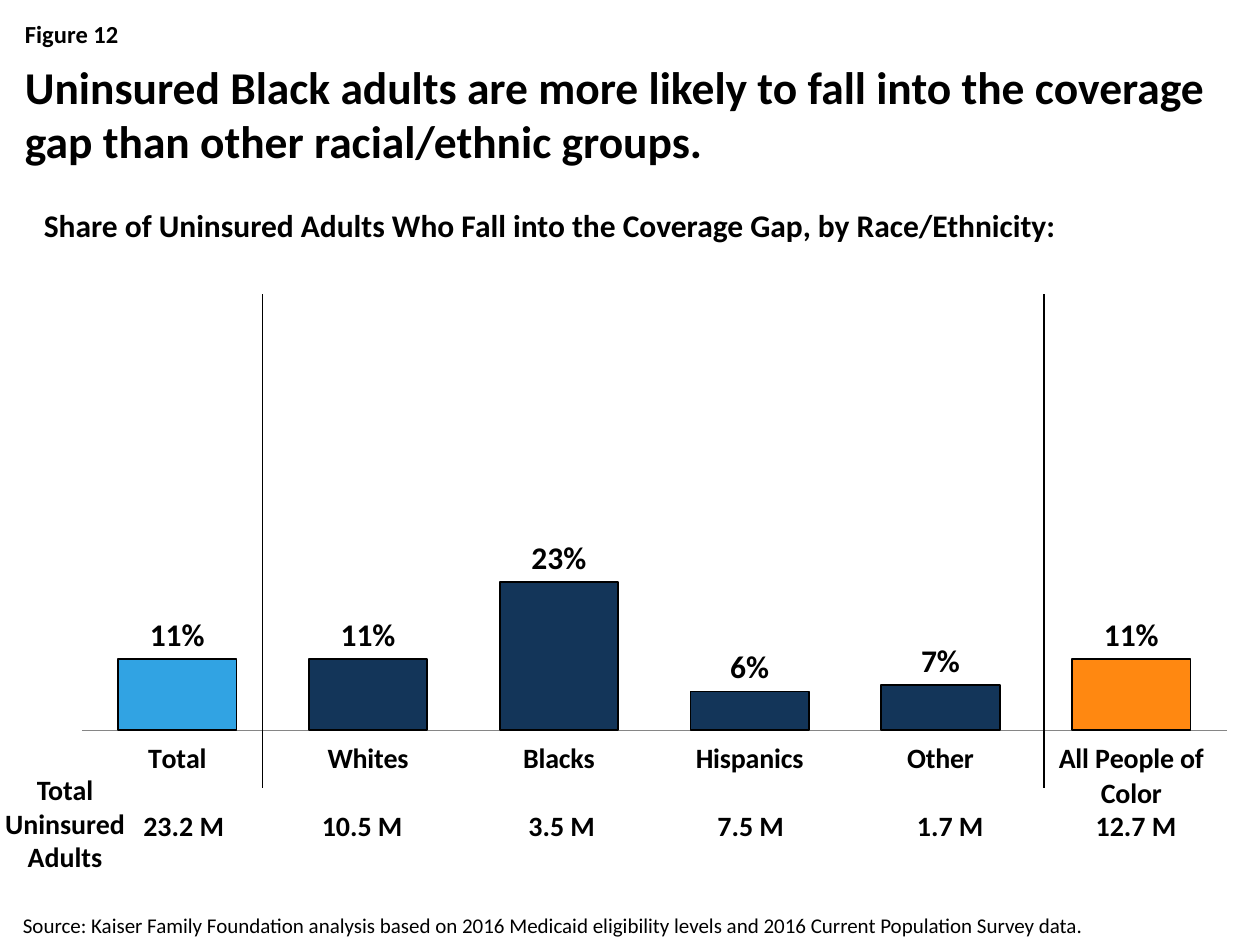
from dataclasses import dataclass

from lxml import etree
from pptx import Presentation
from pptx.chart.data import CategoryChartData
from pptx.dml.color import RGBColor
from pptx.enum.chart import XL_CHART_TYPE, XL_LABEL_POSITION, XL_TICK_LABEL_POSITION, XL_TICK_MARK
from pptx.enum.shapes import MSO_CONNECTOR
from pptx.enum.text import MSO_ANCHOR, PP_ALIGN
from pptx.oxml import parse_xml
from pptx.oxml.ns import qn
from pptx.slide import Slide
from pptx.util import Inches, Length, Pt

COLUMN_CLUSTERED = XL_CHART_TYPE.COLUMN_CLUSTERED
OUTSIDE_END = XL_LABEL_POSITION.OUTSIDE_END
LABELS_LOW = XL_TICK_LABEL_POSITION.LOW
NO_TICK = XL_TICK_MARK.NONE
STRAIGHT = MSO_CONNECTOR.STRAIGHT
TOP, MIDDLE, BOTTOM = MSO_ANCHOR.TOP, MSO_ANCHOR.MIDDLE, MSO_ANCHOR.BOTTOM
LEFT, CENTER = PP_ALIGN.LEFT, PP_ALIGN.CENTER


@dataclass(frozen=True)
class Theme:
    font: str = "Calibri"
    ink: RGBColor = RGBColor(0x00, 0x00, 0x00)
    axis: RGBColor = RGBColor(0x86, 0x86, 0x86)
    total: RGBColor = RGBColor(0x31, 0xA3, 0xE3)
    group: RGBColor = RGBColor(0x13, 0x35, 0x59)
    combined: RGBColor = RGBColor(0xFF, 0x88, 0x11)
    title_size: int = 26
    chart_size: int = 18
    label_size: int = 16
    figure_size: int = 14
    source_size: int = 12


THEME = Theme()
SLIDE_WIDTH, SLIDE_HEIGHT = Inches(10), Inches(7.5)
GRID_COLUMNS, GRID_ROWS = 120, 90


@dataclass(frozen=True)
class Area:
    column: float
    row: float
    columns: float
    rows: float

    def lengths(self) -> tuple[Length, Length, Length, Length]:
        return (across(self.column), down(self.row), across(self.columns), down(self.rows))


@dataclass(frozen=True)
class Label:
    text: str
    area: Area
    size: int
    bold: bool = True
    align: PP_ALIGN = LEFT
    anchor: MSO_ANCHOR = TOP


@dataclass(frozen=True)
class Population:
    name: str
    share: float
    uninsured: str
    column: float
    color: RGBColor = THEME.group


POPULATIONS = (
    Population("Total", 0.11, "23.2 M", 9, THEME.total),
    Population("Whites", 0.11, "10.5 M", 26),
    Population("Blacks", 0.23, "3.5 M", 45),
    Population("Hispanics", 0.06, "7.5 M", 63),
    Population("Other", 0.07, "1.7 M", 82),
    Population("All People of Color", 0.11, "12.7 M", 99.7, THEME.combined),
)
LABELS = (
    Label("Figure 12", Area(1.2, 1.2, 117.6, 4.1), THEME.figure_size),
    Label(
        "Uninsured Black adults are more likely to fall into the coverage gap "
        "than other racial/ethnic groups.",
        Area(1.2, 4.8, 117.6, 12), THEME.title_size, anchor=MIDDLE,
    ),
    Label(
        "Share of Uninsured Adults Who Fall into the Coverage Gap, by Race/Ethnicity:",
        Area(3, 19, 101, 4.8), THEME.chart_size,
    ),
    Label("Total Uninsured Adults", Area(-2.3, 73, 17, 10.9), THEME.label_size, align=CENTER),
    Label(
        "Source: Kaiser Family Foundation analysis based on 2016 Medicaid eligibility levels "
        "and 2016 Current Population Survey data.",
        Area(1, 85, 109.2, 4.9), THEME.source_size, bold=False, anchor=BOTTOM,
    ),
)
CHART_AREA = Area(2, 26.6, 116, 52.4)
PLOT_SHARES = {"x": 0.05, "y": 0, "w": 0.94, "h": 0.82}
DIVIDER_COLUMNS = (25, 99.4)
DIVIDER_ROWS = (28, 75)


def across(columns: float) -> Length:
    return Length(round(SLIDE_WIDTH * columns / GRID_COLUMNS))


def down(rows: float) -> Length:
    return Length(round(SLIDE_HEIGHT * rows / GRID_ROWS))


def style_font(font, size: int, bold: bool) -> None:
    font.name = THEME.font
    font.size = Pt(size)
    font.bold = bold
    font.color.rgb = THEME.ink


def add_label(slide: Slide, label: Label) -> None:
    frame = slide.shapes.add_textbox(*label.area.lengths()).text_frame
    frame.word_wrap = True
    frame.vertical_anchor = label.anchor
    paragraph = frame.paragraphs[0]
    paragraph.alignment = label.align
    run = paragraph.add_run()
    run.text = label.text
    style_font(run.font, label.size, label.bold)


def add_divider(slide: Slide, column: float) -> None:
    top, bottom = map(down, DIVIDER_ROWS)
    line = slide.shapes.add_connector(STRAIGHT, across(column), bottom, across(column), top)
    line.line.color.rgb = THEME.ink
    line.line.width = Pt(1)
    etree.SubElement(line._element.spPr, qn("a:effectLst"))


def place_plot(chart) -> None:
    modes = "".join(f'<c:{side}Mode val="edge"/>' for side in "xy")
    shares = "".join(f'<c:{side} val="{share}"/>' for side, share in PLOT_SHARES.items())
    plot_area = chart._chartSpace.chart.plotArea
    for layout in plot_area.findall(qn("c:layout")):
        plot_area.remove(layout)
    plot_area.insert(0, parse_xml(
        '<c:layout xmlns:c="http://schemas.openxmlformats.org/drawingml/2006/chart">'
        f'<c:manualLayout><c:layoutTarget val="inner"/>{modes}{shares}'
        "</c:manualLayout></c:layout>"
    ))


def add_share_chart(slide: Slide) -> None:
    data = CategoryChartData(number_format="0%")
    data.categories = [population.name for population in POPULATIONS]
    data.add_series("Series 1", [population.share for population in POPULATIONS])
    chart = slide.shapes.add_chart(COLUMN_CLUSTERED, *CHART_AREA.lengths(), data).chart
    chart.has_legend = False
    chart.has_title = False
    style_font(chart.font, THEME.chart_size, False)
    place_plot(chart)

    values = chart.value_axis
    values.minimum_scale, values.maximum_scale = 0, 0.7
    values.has_major_gridlines = False
    values.visible = False
    categories = chart.category_axis
    categories.major_tick_mark = NO_TICK
    categories.tick_label_position = LABELS_LOW
    categories.format.line.color.rgb = THEME.axis
    style_font(categories.tick_labels.font, THEME.label_size, True)

    plot = chart.plots[0]
    plot.gap_width = 61
    plot.vary_by_categories = False
    plot.has_data_labels = True
    labels = plot.data_labels
    labels.show_value = True
    labels.position = OUTSIDE_END
    labels.number_format, labels.number_format_is_linked = "0%", False
    style_font(labels.font, THEME.chart_size, True)
    for index, population in enumerate(POPULATIONS):
        bar = plot.series[0].points[index].format
        bar.fill.solid()
        bar.fill.fore_color.rgb = population.color
        bar.line.color.rgb = THEME.ink
        bar.line.width = Pt(1)


def main() -> None:
    presentation = Presentation()
    presentation.slide_width, presentation.slide_height = SLIDE_WIDTH, SLIDE_HEIGHT
    slide = presentation.slides.add_slide(presentation.slide_layouts[6])
    add_share_chart(slide)
    for label in LABELS:
        add_label(slide, label)
    for population in POPULATIONS:
        area = Area(population.column, 76.4, 17, 4.4)
        add_label(slide, Label(population.uninsured, area, THEME.label_size, align=CENTER))
    for column in DIVIDER_COLUMNS:
        add_divider(slide, column)
    presentation.save("out.pptx")


if __name__ == "__main__":
    main()
